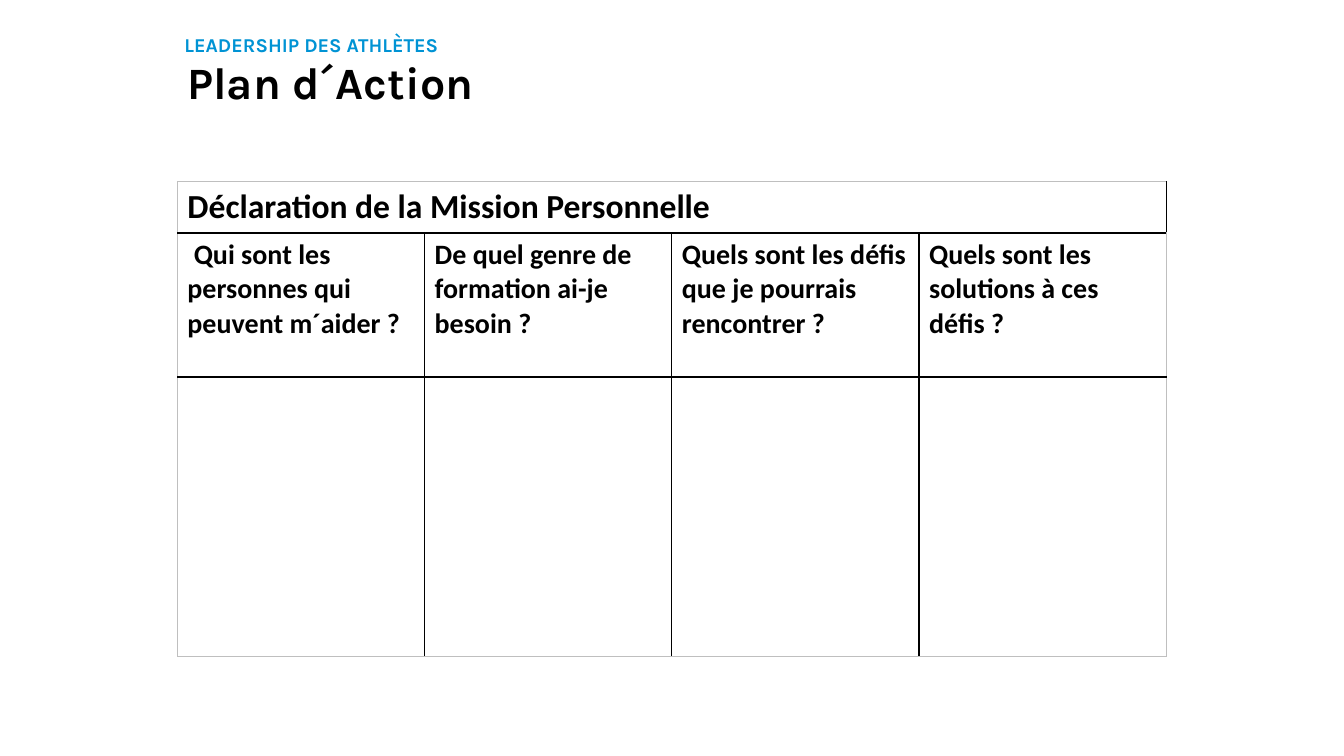
from dataclasses import dataclass

from lxml.etree import SubElement
from pptx import Presentation
from pptx.dml.color import RGBColor
from pptx.enum.text import MSO_ANCHOR, MSO_AUTO_SIZE
from pptx.oxml.ns import qn
from pptx.util import Cm, Pt


@dataclass(frozen=True)
class Theme:
    """Colours, fonts and type sizes."""
    blue: str = "0093D4"
    black: str = "000000"
    grey: str = "BFBFBF"
    white: str = "FFFFFF"
    head: str = "Karla"
    body: str = "Calibri"
    label: int = 14
    title: int = 32
    mission: int = 24
    ask: int = 20


class Page:
    """Hold the style and the current slide."""

    def __init__(self, deck, theme):
        """Add a blank slide."""
        self.theme = theme
        self.slide = deck.slides.add_slide(deck.slide_layouts[6])
        back = self.slide.background.fill
        back.solid()
        back.fore_color.rgb = RGBColor.from_string(theme.white)

    def run(self, para, text, size, font, tint):
        """Add one bold run."""
        run = para.add_run()
        run.text = text
        run.font.size = Pt(size)
        run.font.name = font
        run.font.bold = True
        run.font.color.rgb = RGBColor.from_string(tint)

    def text(self, area, words, size, tint, wrap=True, space=None):
        """Add a heading box."""
        frame = self.slide.shapes.add_textbox(*map(Cm, area)).text_frame
        frame.word_wrap = wrap
        frame.auto_size = MSO_AUTO_SIZE.NONE if wrap else MSO_AUTO_SIZE.SHAPE_TO_FIT_TEXT
        frame.vertical_anchor = MSO_ANCHOR.MIDDLE if wrap else MSO_ANCHOR.TOP
        para = frame.paragraphs[0]
        para.line_spacing = space
        self.run(para, words, size, self.theme.head, tint)

    def edge(self, cell, sides):
        """Draw the four cell borders."""
        props = cell._tc.get_or_add_tcPr()
        for spot, (side, outer) in enumerate(sides.items()):
            line = SubElement(props, qn(f"a:ln{side}"), w=str(Pt(0.5 if outer else 1)))
            fill = SubElement(line, qn("a:solidFill"))
            SubElement(fill, qn("a:srgbClr"), val=self.theme.grey if outer else self.theme.black)
            props.insert(spot, line)

    def table(self, left, top, wide, rows, title, asks):
        """Add the grid with a merged title row."""
        count = len(asks)
        frame = self.slide.shapes.add_table(
            len(rows), count, Cm(left), Cm(top), Cm(wide), Cm(sum(rows)))
        grid = frame.table
        for col in grid.columns:
            col.width = Cm(wide / count)
        for y, high in enumerate(rows):
            grid.rows[y].height = Cm(high)
            for x in range(count):
                cell = grid.cell(y, x)
                cell.fill.background()
                self.edge(cell, {"L": x == 0, "R": x == count - 1,
                                 "T": y == 0, "B": y == len(rows) - 1})
        grid.cell(0, 0).merge(grid.cell(0, count - 1))
        look = self.theme
        self.run(grid.cell(0, 0).text_frame.paragraphs[0],
                 title, look.mission, look.body, look.black)
        for x, ask in enumerate(asks):
            self.run(grid.cell(1, x).text_frame.paragraphs[0],
                     ask, look.ask, look.body, look.black)


def main():
    """Build the action plan slide."""
    deck = Presentation()
    deck.slide_width, deck.slide_height = Cm(33.87), Cm(19.05)
    look = Theme()
    page = Page(deck, look)
    page.text((4.4, 0.71, 7.32, 0.86), "LEADERSHIP DES ATHLÈTES",
              look.label, look.blue, wrap=False)
    page.table(4.47, 4.57, 24.92, (1.3, 3.63, 7.05),
               "Déclaration de la Mission Personnelle",
               (" Qui sont les personnes qui peuvent m´aider ?",
                "De quel genre de formation ai-je besoin ?",
                "Quels sont les défis que je pourrais rencontrer ?",
                "Quels sont les solutions à ces défis ?"))
    page.text((4.47, 1.37, 24.03, 1.55), "Plan d´Action",
              look.title, look.black, space=0.9)
    deck.save("out.pptx")


if __name__ == "__main__":
    main()
